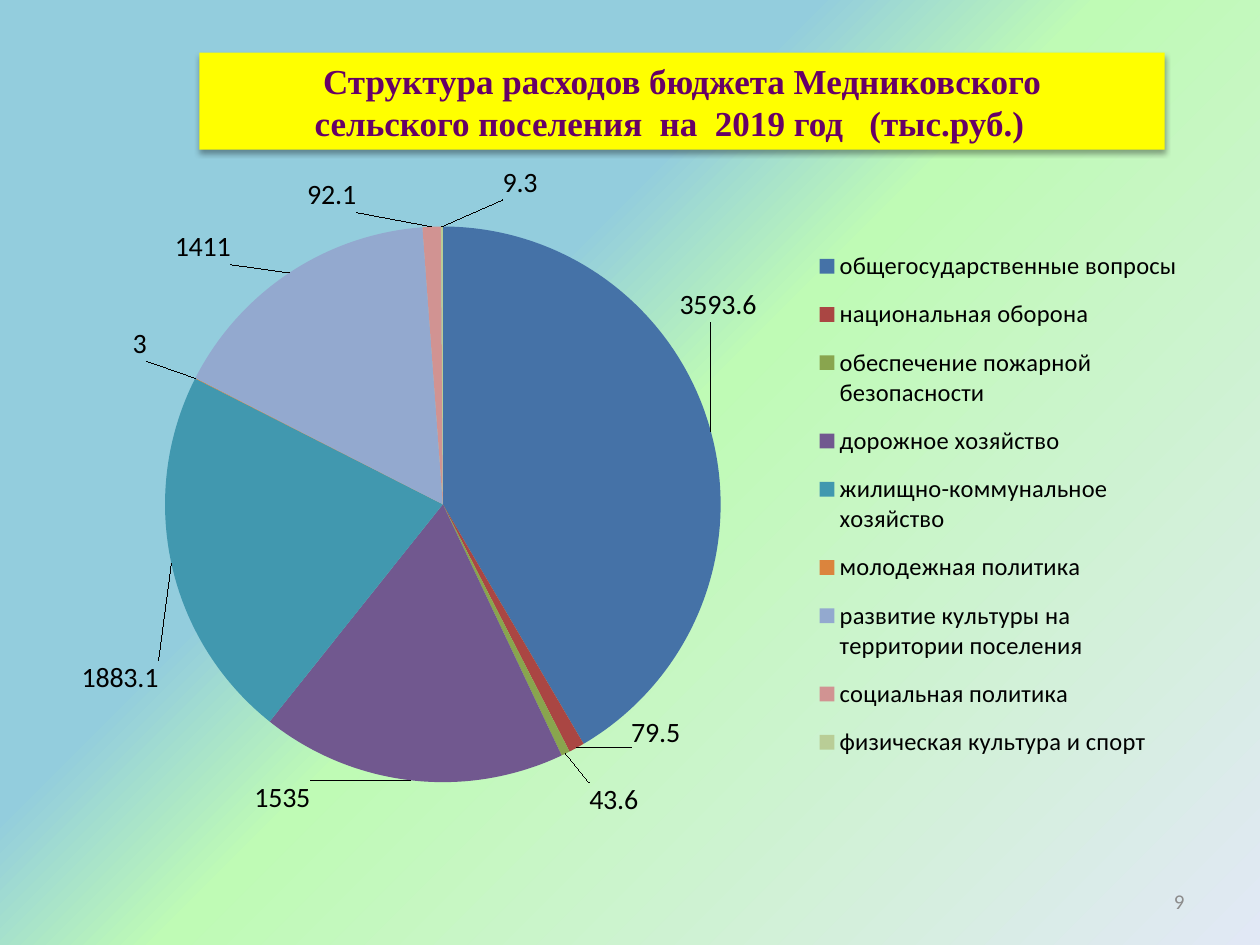
"""Builds a slide with a pie chart of the settlement's budget spending."""
from pptx import Presentation
from pptx.chart.data import CategoryChartData as Data
from pptx.dml.color import RGBColor as Rgb
from pptx.enum.chart import XL_CHART_TYPE as Kind, XL_LABEL_POSITION as Spot
from pptx.enum.chart import XL_LEGEND_POSITION as Side
from pptx.enum.shapes import MSO_SHAPE as Form
from pptx.enum.text import MSO_ANCHOR as Anchor, PP_ALIGN as Align
from pptx.oxml import parse_xml
from pptx.oxml.ns import nsdecls, qn
from pptx.util import Cm, Pt

HUES = {"banner": "FFFF00", "title": "660066", "page": "8C8C8C", "text": "000000"}
STOPS = [(37, "93CDDD"), (50, "BFFBB5"), (100, "E1E8F5")]
TITLE = ["Структура расходов бюджета Медниковского",
         "сельского поселения  на  2019 год   (тыс.руб.)"]
# Category, value, slice colour, label shift in percent of the chart
ROWS = [
    ("общегосударственные вопросы", 3593.6, "4572A7", -3.4, -15.6),
    ("национальная оборона", 79.5, "AA4643", 4.5, -5.5),
    ("обеспечение пожарной безопасности", 43.6, "89A54E", 1.8, 3.3),
    ("дорожное хозяйство", 1535, "71588F", -8.8, -1),
    ("жилищно-коммунальное хозяйство", 1883.1, "4198AF", -0.5, 14),
    ("молодежная политика", 3, "DB843D", -3.7, -2),
    ("развитие культуры на территории поселения", 1411, "93A9CF", -4.8, -0.3),
    ("социальная политика", 92.1, "D19392", -8.8, -1),
    ("физическая культура и спорт", 9.3, "B9CD96", 6.9, -2.8),
]


def style(font, size, hue, name="Calibri", bold=False):
    """Set the face, size and colour of a font."""
    font.name, font.size, font.bold = name, Pt(size), bold
    font.color.rgb = Rgb.from_string(hue)


def add_back(slide):
    """Fill the background with a diagonal gradient."""
    slide.background.fill.gradient()
    grad = slide.element.find(".//" + qn("a:gradFill"))
    stops = "".join(f'<a:gs pos="{pos * 1000}"><a:srgbClr val="{hue}"/></a:gs>'
                    for pos, hue in STOPS)
    new = parse_xml(f'<a:gradFill {nsdecls("a")} rotWithShape="1"><a:gsLst>{stops}'
                    '</a:gsLst><a:lin ang="2700000" scaled="0"/></a:gradFill>')
    grad.getparent().replace(grad, new)


def add_title(slide):
    """Add the banner with its soft shadow and two lines of text."""
    box = slide.shapes.add_shape(Form.RECTANGLE, Cm(4.02), Cm(1.06), Cm(19.46), Cm(1.96))
    box.fill.solid()
    box.fill.fore_color.rgb = Rgb.from_string(HUES["banner"])
    box.line.fill.background()
    box.shadow.inherit = False
    glow = parse_xml(f'<a:outerShdw {nsdecls("a")} blurRad="40000" dist="23000" '
                     'dir="5400000" rotWithShape="0"><a:srgbClr val="000000">'
                     '<a:alpha val="35000"/></a:srgbClr></a:outerShdw>')
    box.element.spPr.find(qn("a:effectLst")).append(glow)
    frame = box.text_frame
    frame.word_wrap, frame.vertical_anchor = True, Anchor.MIDDLE
    frame.add_paragraph()
    for para, line in zip(frame.paragraphs, TITLE):
        para.alignment = Align.CENTER
        run = para.add_run()
        run.text = line
        style(run.font, 20, HUES["title"], "Times New Roman", True)
    para._p.get_or_add_pPr().set("marR", str(Cm(0.5)))


def place(node, index, **dims):
    """Give a chart part a manual layout in fractions of the chart."""
    tags = "".join(f'<c:{key} val="{val}"/>' for key, val in dims.items())
    for old in node.findall(qn("c:layout")):
        node.remove(old)
    node.insert(index, parse_xml(f'<c:layout {nsdecls("c")}><c:manualLayout>{tags}'
                                 '</c:manualLayout></c:layout>'))


def add_pie(slide):
    """Add the pie chart with shifted value labels and a legend."""
    data = Data()
    data.categories = [row[0] for row in ROWS]
    data.add_series("Series 1", [row[1] for row in ROWS])
    chart = slide.shapes.add_chart(Kind.PIE, Cm(1.27), Cm(3.18), Cm(22.86),
                                   Cm(13.84), data).chart
    style(chart.font, 10, HUES["text"])
    chart.has_title = False
    chart.has_legend = True
    key = chart.legend
    key.position, key.include_in_layout = Side.RIGHT, False
    style(key.font, 14, HUES["text"])
    place(key._element, 1, xMode="edge", yMode="edge", x=0.66, y=0.11, w=0.33, h=0.79)
    area = chart._chartSpace.find(".//" + qn("c:plotArea"))
    place(area, 0, layoutTarget="inner", xMode="edge", yMode="edge",
          x=0.09, y=0.1, w=0.49, h=0.81)
    chart.plots[0].vary_by_categories = True
    pie = chart.plots[0].series[0]
    pie.data_labels.show_value = True
    style(pie.data_labels.font, 16, HUES["text"])
    for num, (_, _, hue, right, down) in enumerate(ROWS):
        point = pie.points[num]
        point.format.fill.solid()
        point.format.fill.fore_color.rgb = Rgb.from_string(hue)
        label = point.data_label
        label.position = Spot.OUTSIDE_END
        style(label.font, 16, HUES["text"])
        node = pie._element.findall(".//" + qn("c:dLbl"))[num]
        place(node, 1, x=right / 100, y=down / 100)


def add_page(slide):
    """Add the page number."""
    frame = slide.shapes.add_textbox(Cm(18.2), Cm(17.65), Cm(5.93), Cm(1.02)).text_frame
    frame.word_wrap, frame.vertical_anchor = True, Anchor.MIDDLE
    para = frame.paragraphs[0]
    para.alignment = Align.RIGHT
    run = para.add_run()
    run.text = "9"
    style(run.font, 12, HUES["page"])


def main():
    """Build and save the slide."""
    deck = Presentation()
    deck.slide_width, deck.slide_height = Cm(25.4), Cm(19.05)
    slide = deck.slides.add_slide(deck.slide_layouts[6])
    for add in (add_back, add_page, add_title, add_pie):
        add(slide)
    deck.save("out.pptx")


if __name__ == "__main__":
    main()
